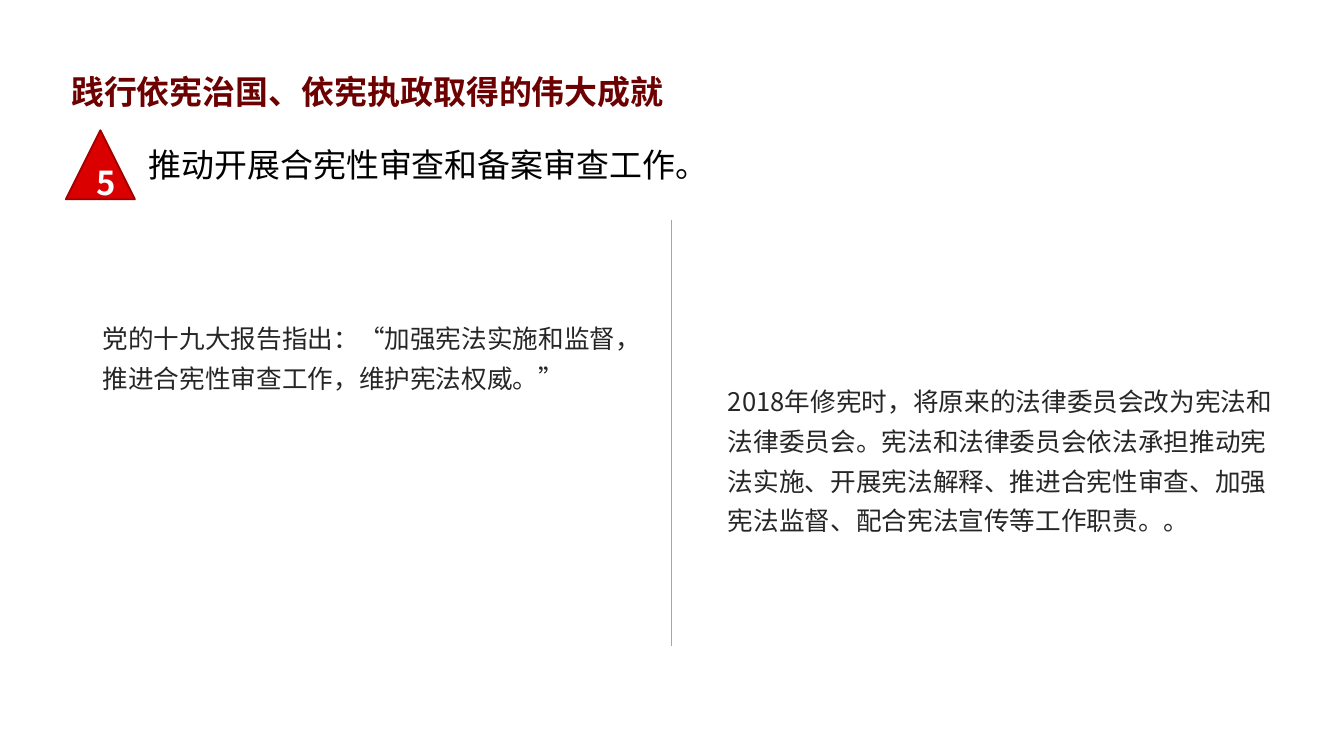
from pptx import Presentation
from pptx.dml.color import RGBColor
from pptx.enum.shapes import MSO_CONNECTOR as Link, MSO_SHAPE as Shape
from pptx.enum.text import MSO_ANCHOR as Anchor, MSO_AUTO_SIZE as Fit, PP_ALIGN as Align
from pptx.oxml.ns import qn
from pptx.util import Pt
from lxml.etree import SubElement


def color(code):
    return RGBColor.from_string(code)


class Deck:
    face = "Noto Sans CJK SC"
    dark = "6D0000"
    red = "DA0000"
    edge = "A10000"
    black = "000000"
    body = "262626"
    gray = "A6A6A6"
    white = "FFFFFF"

    def __init__(self, wide, high):
        self.prs = Presentation()
        self.prs.slide_width = Pt(wide)
        self.prs.slide_height = Pt(high)
        self.slide = self.prs.slides.add_slide(self.prs.slide_layouts[5])

    def label(self, shape, text, size, tint, bold=False, align=Align.LEFT):
        shape.text_frame.text = text
        para = shape.text_frame.paragraphs[0]
        para.alignment = align
        font = para.font
        font.size = Pt(size)
        font.bold = bold
        font.color.rgb = color(tint)
        font.name = self.face
        SubElement(font._element, qn("a:ea")).set("typeface", self.face)
        return para

    def title(self, text, x, y, w, h):
        shape = self.slide.shapes.title
        shape.left, shape.top, shape.width, shape.height = map(Pt, (x, y, w, h))
        frame = shape.text_frame
        frame.word_wrap = True
        frame.auto_size = Fit.SHAPE_TO_FIT_TEXT
        frame.vertical_anchor = Anchor.TOP
        self.label(shape, text, 18, self.dark, True)

    def text(self, text, x, y, w, h, size, tint):
        box = self.slide.shapes.add_textbox(*map(Pt, (x, y, w, h)))
        box.text_frame.word_wrap = True
        box.text_frame.auto_size = Fit.SHAPE_TO_FIT_TEXT
        return self.label(box, text, size, tint)

    def prose(self, text, x, y, w, h):
        para = self.text(text, x, y, w, h, 14, self.body)
        para.line_spacing = 1.3
        para.space_after = Pt(4)

    def badge(self, text, x, y, side):
        mark = self.slide.shapes.add_shape(
            Shape.ISOSCELES_TRIANGLE, *map(Pt, (x, y, side, side)))
        mark.shadow.inherit = False
        mark.fill.solid()
        mark.fill.fore_color.rgb = color(self.red)
        mark.line.color.rgb = color(self.edge)
        mark.line.width = Pt(1)
        mark.text_frame.vertical_anchor = Anchor.MIDDLE
        self.label(mark, text, 18, self.white, True, Align.CENTER)

    def rule(self, x, top, end):
        line = self.slide.shapes.add_connector(
            Link.STRAIGHT, *map(Pt, (x, top, x, end)))
        line.line.color.rgb = color(self.gray)
        line.line.width = Pt(0.5)
        SubElement(line._element.spPr, qn("a:effectLst"))

    def save(self):
        self.prs.save("out.pptx")


def main():
    deck = Deck(735, 413.4)
    deck.title("践行依宪治国、依宪执政取得的伟大成就", 31.7, 35.3, 342.7, 29)
    deck.text("推动开展合宪性审查和备案审查工作。", 74.2, 75.6, 510.5, 29, 18, deck.black)
    deck.badge("5", 36, 71.2, 37.8)
    deck.prose("党的十九大报告指出：“加强宪法实施和监督，推进合宪性审查工作，维护宪法权威。”",
               49, 167.8, 308.2, 51)
    deck.rule(367.3, 120.2, 353.5)
    deck.prose("2018年修宪时，将原来的法律委员会改为宪法和法律委员会。"
               "宪法和法律委员会依法承担推动宪法实施、开展宪法解释、推进合宪性审查、"
               "加强宪法监督、配合宪法宣传等工作职责。。",
               391, 202.3, 312.5, 95)
    deck.save()


if __name__ == "__main__":
    main()
